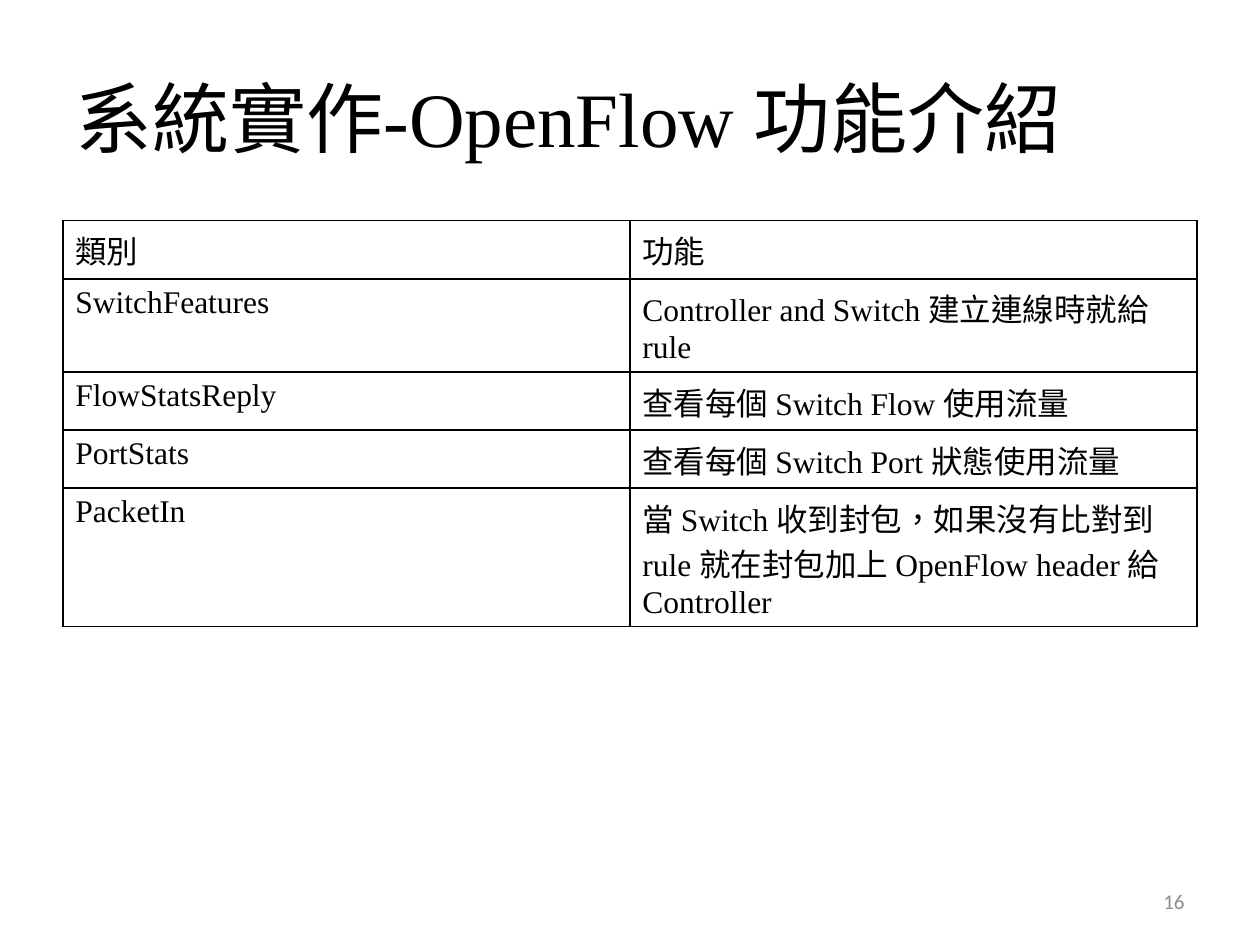
from pptx import Presentation
from pptx.dml.color import RGBColor
from pptx.enum.text import MSO_ANCHOR, PP_ALIGN
from pptx.oxml.ns import qn
from pptx.util import Cm, Pt
from lxml.etree import SubElement

# Content: each cell is a list of (text, font) runs
TIMES, NOTO = "Times New Roman", "Noto Sans CJK SC"
COLORS = {"ink": "000000", "gray": "8C8C8C"}
TITLE = [("系統實作-OpenFlow 功能介紹", TIMES)]
NUMBER = [("16", "Calibri")]
ROWS = [
    ([("類別", NOTO)], [("功能", NOTO)]),
    ([("SwitchFeatures", TIMES)],
     [("Controller and Switch ", TIMES), ("建立連線時就給 ", NOTO), ("rule", TIMES)]),
    ([("FlowStatsReply", TIMES)],
     [("查看每個 ", NOTO), ("Switch Flow ", TIMES), ("使用流量", NOTO)]),
    ([("PortStats", TIMES)],
     [("查看每個 ", NOTO), ("Switch Port ", TIMES), ("狀態使用流量", NOTO)]),
    ([("PacketIn", TIMES)],
     [("當 Switch 收到封包，如果沒有比對到 rule 就在封包加上 OpenFlow header 給 Controller", TIMES)]),
]
HEIGHTS = [1.17, 1.88, 1.17, 1.17, 2.79]
LEFT, WIDTH = 1.27, 22.86


def write(frame, runs, size=18, color="ink", align=PP_ALIGN.LEFT):
    frame.word_wrap = True
    para = frame.paragraphs[0]
    para.alignment = align
    for text, face in runs:
        run = para.add_run()
        run.text = text
        font = run.font
        font.size, font.name = Pt(size), face
        font.color.rgb = RGBColor.from_string(COLORS[color])
        props = run._r.get_or_add_rPr()
        props.set("lang", "zh-TW")
        SubElement(props, qn("a:ea"), typeface=NOTO)


def add_box(slide, runs, place, **style):
    frame = slide.shapes.add_textbox(*map(Cm, place)).text_frame
    write(frame, runs, **style)
    frame.vertical_anchor = MSO_ANCHOR.MIDDLE


def frame_cell(cell):
    cell.margin_left = cell.margin_right = Cm(0.25)
    cell.margin_top = cell.margin_bottom = Cm(0.13)
    props = cell._tc.get_or_add_tcPr()
    for side in ("lnL", "lnR", "lnT", "lnB"):
        line = SubElement(props, qn(f"a:{side}"), w=str(Pt(1)))
        fill = SubElement(line, qn("a:solidFill"))
        SubElement(fill, qn("a:srgbClr"), val=COLORS["ink"])
    cell.fill.background()


def main():
    deck = Presentation()
    deck.slide_width, deck.slide_height = Cm(25.4), Cm(19.05)
    slide = deck.slides.add_slide(deck.slide_layouts[6])

    # Title
    add_box(slide, TITLE, (LEFT, 0.76, WIDTH, 3.18), size=44)

    # Table
    table = slide.shapes.add_table(
        len(ROWS), 2, Cm(LEFT), Cm(4.45), Cm(WIDTH), Cm(sum(HEIGHTS))).table
    table.first_row = table.horz_banding = False
    for r, (row, height) in enumerate(zip(ROWS, HEIGHTS)):
        table.rows[r].height = Cm(height)
        for c, runs in enumerate(row):
            cell = table.cell(r, c)
            write(cell.text_frame, runs)
            frame_cell(cell)

    # Slide number
    add_box(slide, NUMBER, (18.21, 17.65, 5.92, 1.02),
            size=12, color="gray", align=PP_ALIGN.RIGHT)

    deck.save("out.pptx")


if __name__ == "__main__":
    main()
